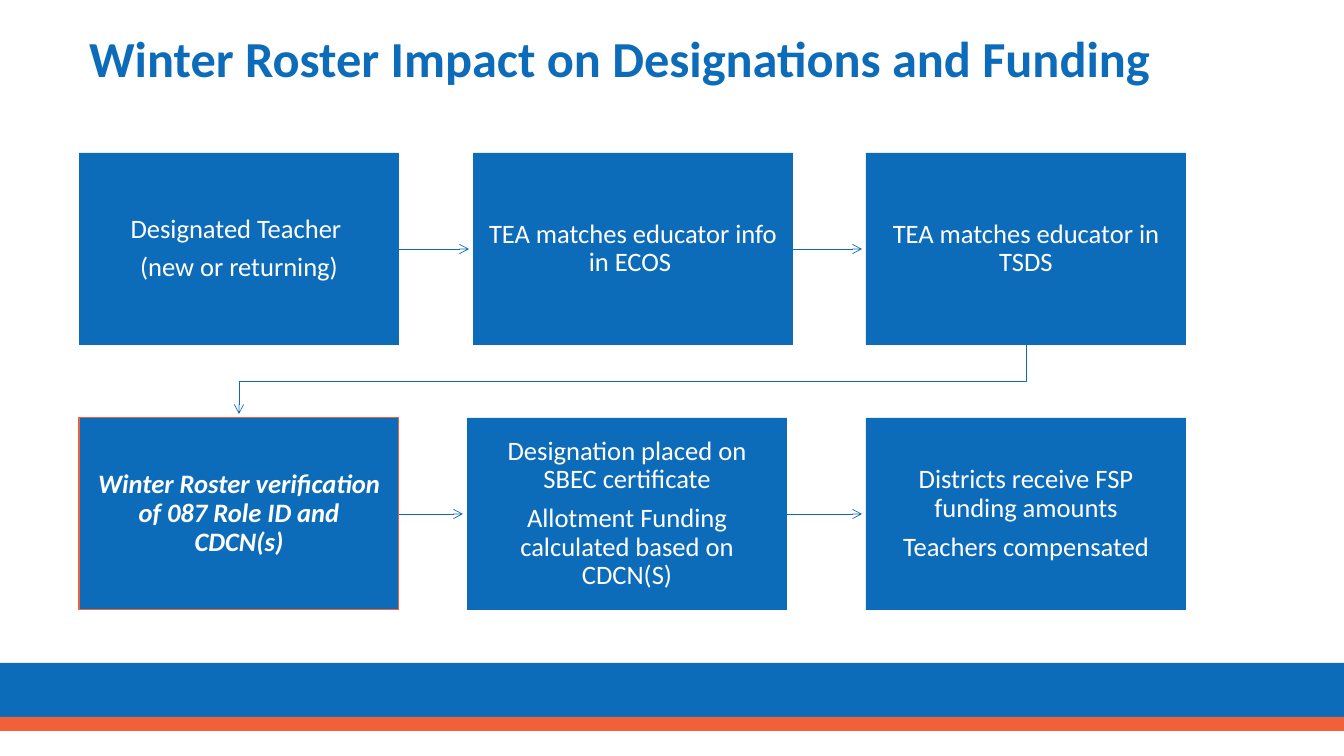
from lxml.etree import SubElement
from pptx import Presentation
from pptx.dml.color import RGBColor
from pptx.enum.shapes import MSO_CONNECTOR, MSO_SHAPE
from pptx.enum.text import MSO_ANCHOR, MSO_AUTO_SIZE, PP_ALIGN
from pptx.oxml.ns import qn
from pptx.util import Pt

BLUE = RGBColor(0x0D, 0x6C, 0xB9)
ORANGE = RGBColor(0xF1, 0x60, 0x38)
WHITE = RGBColor(0xFF, 0xFF, 0xFF)
SLIDE_W, SLIDE_H = 1344, 756
STEP_W, STEP_H = 320, 192
ARROW_GAP = 4

TOP_ROW = [
    (79, ["Designated Teacher ", "(new or returning)"]),
    (473, ["TEA matches educator info in ECOS "]),
    (866, ["TEA matches educator in TSDS"]),
]
BOTTOM_ROW = [
    (79, ["Winter Roster verification of 087 Role ID and CDCN(s)"]),
    (467, ["Designation placed on SBEC certificate",
           "Allotment Funding calculated based on CDCN(S)"]),
    (866, ["Districts receive FSP funding amounts", "Teachers compensated"]),
]


def px(length):
    return round(length * 914400 / 100.8)


def write_text(frame, paragraphs, size, color, align, margins, bold=False, italic=False):
    frame.word_wrap = True
    frame.auto_size = MSO_AUTO_SIZE.NONE
    frame.vertical_anchor = MSO_ANCHOR.MIDDLE
    frame.margin_left = frame.margin_right = px(margins[0])
    frame.margin_top = frame.margin_bottom = px(margins[1])
    for index, text in enumerate(paragraphs):
        paragraph = frame.add_paragraph() if index else frame.paragraphs[0]
        paragraph.text = text
        paragraph.alignment = align
        paragraph.line_spacing = 0.9
        paragraph.space_before = Pt(7 if index else 0)
        font = paragraph.font
        font.name, font.size = "Calibri", Pt(size)
        font.bold, font.italic = bold, italic
        font.color.rgb = color


def add_rectangle(slide, left, top, width, height, fill, outline=None):
    rectangle = slide.shapes.add_shape(
        MSO_SHAPE.RECTANGLE, px(left), px(top), px(width), px(height))
    rectangle.shadow.inherit = False
    rectangle.fill.solid()
    rectangle.fill.fore_color.rgb = fill
    if outline is None:
        rectangle.line.fill.background()
    else:
        rectangle.line.color.rgb = outline
        rectangle.line.width = Pt(0.75)
    return rectangle


def style_arrow(arrow):
    arrow.line.color.rgb = BLUE
    arrow.line.width = Pt(0.5)
    properties = arrow.line._get_or_add_ln()
    SubElement(properties, qn("a:tailEnd"), type="arrow")


def add_row(slide, top, steps, highlighted=None):
    for index, (left, paragraphs) in enumerate(steps):
        important = index == highlighted
        step = add_rectangle(slide, left, top, STEP_W, STEP_H, BLUE,
                             ORANGE if important else None)
        write_text(step.text_frame, paragraphs, 19, WHITE, PP_ALIGN.CENTER, (15, 15),
                   bold=important, italic=important)
    middle = px(top + STEP_H / 2)
    for (left, _), (next_left, _) in zip(steps, steps[1:]):
        arrow = slide.shapes.add_connector(
            MSO_CONNECTOR.STRAIGHT, px(left + STEP_W), middle,
            px(next_left - ARROW_GAP), middle)
        style_arrow(arrow)
        SubElement(arrow._element.spPr, qn("a:effectLst"))


def add_return_arrow(slide, start_x, start_y, end_x, end_y):
    turn_y = (start_y + end_y) / 2
    builder = slide.shapes.build_freeform(px(start_x), px(start_y))
    builder.add_line_segments(
        [(px(start_x), px(turn_y)), (px(end_x), px(turn_y)),
         (px(end_x), px(end_y - ARROW_GAP))], close=False)
    arrow = builder.convert_to_shape()
    arrow.shadow.inherit = False
    arrow.fill.background()
    style_arrow(arrow)


def add_process(slide, top, row_pitch):
    bottom_top = top + row_pitch
    add_row(slide, top, TOP_ROW)
    add_row(slide, bottom_top, BOTTOM_ROW, highlighted=0)
    add_return_arrow(slide, TOP_ROW[-1][0] + STEP_W / 2, top + STEP_H,
                     BOTTOM_ROW[0][0] + STEP_W / 2, bottom_top)


def add_footer(slide, top):
    add_rectangle(slide, 0, top, SLIDE_W, 58, BLUE)
    add_rectangle(slide, 0, top + 54, SLIDE_W, 14, ORANGE)


def add_title(slide, left, top, width, height):
    title = slide.shapes.title
    title.left, title.top = px(left), px(top)
    title.width, title.height = px(width), px(height)
    write_text(title.text_frame, ["Winter Roster Impact on Designations and Funding"],
               36, BLUE, PP_ALIGN.LEFT, (10, 5), bold=True)


def main():
    presentation = Presentation()
    presentation.slide_width, presentation.slide_height = px(SLIDE_W), px(SLIDE_H)
    slide = presentation.slides.add_slide(presentation.slide_layouts[5])
    add_footer(slide, 663)
    add_title(slide, 79, 20, 1226, 83)
    add_process(slide, 153, 265)
    presentation.save("out.pptx")


if __name__ == "__main__":
    main()
